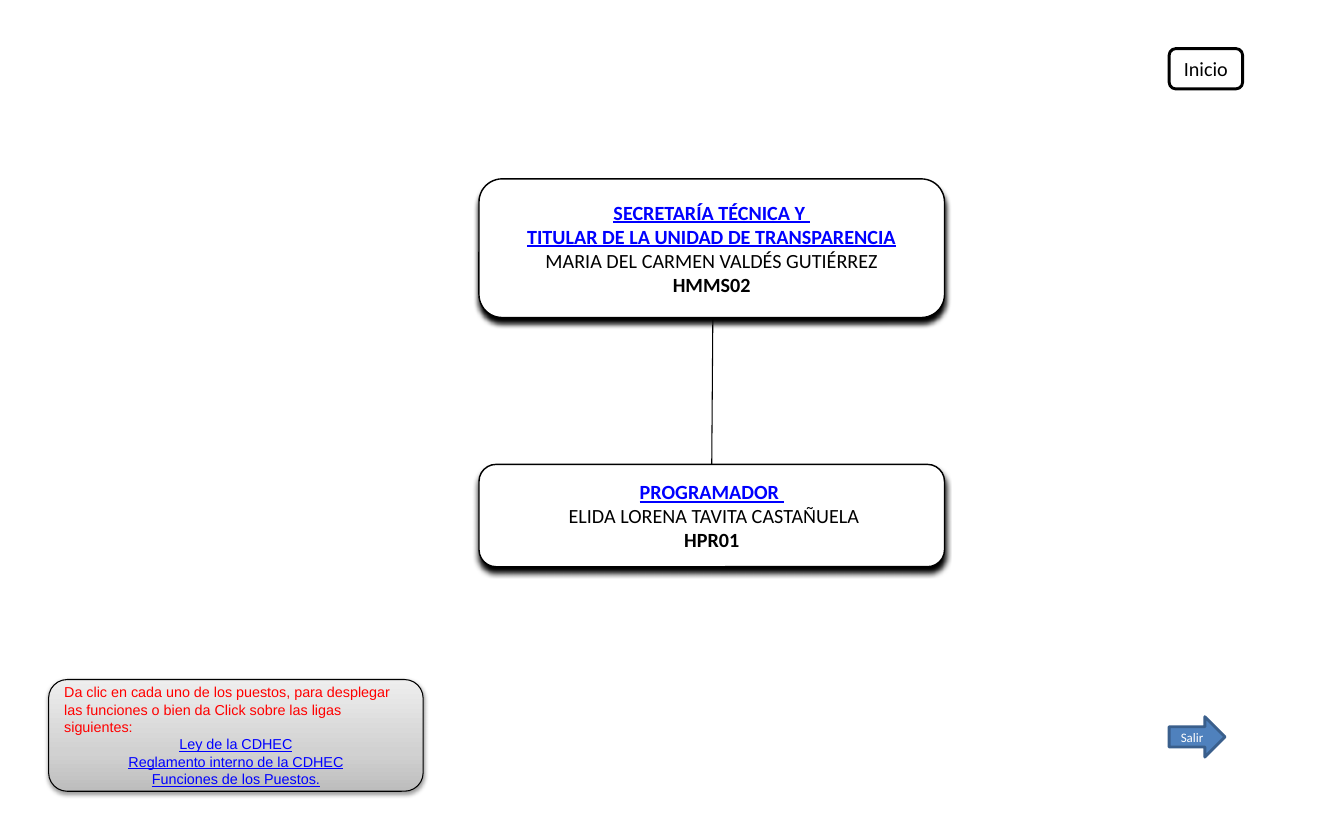
from lxml import etree
from pptx import Presentation, util as u
from pptx.dml import color
from pptx.enum import shapes, text
from pptx.oxml import ns

COLORS = {
    "white": "FFFFFF", "black": "000000", "link": "0000FF", "notice": "FF0000",
    "arrow": "4F81BD", "arrow_edge": "3A5F8C",
}
NOTE_GRADIENT = {0: "BDBDBD", 35: "D1D1D1", 100: "EEEEEE"}
CENTER, LEFT = text.PP_ALIGN.CENTER, text.PP_ALIGN.LEFT


def rgb(name):
    return color.RGBColor.from_string(COLORS[name])


def child(parent, tag, **attrs):
    return etree.SubElement(parent, ns.qn(tag), {k: str(v) for k, v in attrs.items()})


def line_of(words, color="black", bold=False, underline=False, align=CENTER):
    return dict(words=words, color=color, bold=bold, underline=underline, align=align)


class Chart:
    def __init__(self, prs):
        self.prs = prs
        self.s = prs.slides.add_slide(prs.slide_layouts[6])

    def x(self, percent):
        return u.Emu(round(self.prs.slide_width * percent / 100))

    def y(self, percent):
        return u.Emu(round(self.prs.slide_height * percent / 100))

    def shape(self, kind, left, top, width, height, fill="white", edge="black", weight=1):
        sp = self.s.shapes.add_shape(
            kind, self.x(left), self.y(top), self.x(width), self.y(height))
        sp.fill.solid()
        sp.fill.fore_color.rgb = rgb(fill)
        sp.line.color.rgb = rgb(edge)
        sp.line.width = u.Pt(weight)
        sp.shadow.inherit = False
        return sp

    def label(self, sp, lines, size, font="Calibri"):
        tf = sp.text_frame
        tf.word_wrap = True
        tf.vertical_anchor = text.MSO_ANCHOR.MIDDLE
        for i, line in enumerate(lines):
            p = tf.paragraphs[0] if i == 0 else tf.add_paragraph()
            p.alignment = line["align"]
            r = p.add_run()
            r.text = line["words"]
            r.font.name = font
            r.font.size = u.Pt(size)
            r.font.bold = line["bold"]
            r.font.underline = line["underline"]
            r.font.color.rgb = rgb(line["color"])
        return tf

    def shadow(self, sp, opacity, blur, distance):
        effects = sp._element.spPr.find(ns.qn("a:effectLst"))
        outer = child(effects, "a:outerShdw", blurRad=u.Pt(blur), dist=u.Pt(distance),
                      dir=5400000, rotWithShape=0)
        tint = child(outer, "a:srgbClr", val=COLORS["black"])
        child(tint, "a:alpha", val=opacity * 1000)

    def gradient(self, sp, stops):
        sp.fill.gradient()
        sp.fill.gradient_angle = 90
        gs_list = sp._element.spPr.find(ns.qn("a:gradFill")).find(ns.qn("a:gsLst"))
        gs_list.clear()
        for position, value in stops.items():
            child(child(gs_list, "a:gs", pos=position * 1000), "a:srgbClr", val=value)

    def position(self, top, height, titles, person, code):
        sp = self.shape(shapes.MSO_SHAPE.ROUNDED_RECTANGLE, 35.64, top, 34.64, height)
        self.shadow(sp, 100, 4, 4)
        lines = [line_of(t, "link", bold=True, underline=True) for t in titles]
        tf = self.label(sp, lines + [line_of(person), line_of(code, bold=True)], 14)
        tf.word_wrap = False
        tf.margin_left = tf.margin_right = u.Inches(0.17)
        tf.margin_top = tf.margin_bottom = u.Inches(0.09)

    def connector(self, x1, y1, x2, y2):
        c = self.s.shapes.add_connector(
            shapes.MSO_CONNECTOR.STRAIGHT, self.x(x1), self.y(y1), self.x(x2), self.y(y2))
        c.line.color.rgb = rgb("black")
        c.line.width = u.Pt(0.75)
        child(c._element.spPr, "a:effectLst")

    def button(self, kind, top, width, words, size, ink, **style):
        sp = self.shape(kind, 86.99, top, width, 4.95, weight=2, **style)
        self.label(sp, [line_of(words, ink)], size)

    def note(self, notice, links):
        sp = self.shape(shapes.MSO_SHAPE.ROUNDED_RECTANGLE,
                        3.62, 83.38, 27.87, 13.71, weight=0.75)
        self.gradient(sp, NOTE_GRADIENT)
        self.shadow(sp, 38, 3.1, 1.6)
        lines = [line_of(notice, "notice", align=LEFT)]
        lines += [line_of(link, "link", underline=True) for link in links]
        self.label(sp, lines, 10, "Arial")


def main():
    prs = Presentation()
    prs.slide_width, prs.slide_height = u.Inches(12.99), u.Inches(7.88)
    chart = Chart(prs)
    chart.position(56.98, 12.56, ["PROGRAMADOR "],
                   " ELIDA LORENA TAVITA CASTAÑUELA", "HPR01")
    chart.position(21.95, 17.01,
                   ["SECRETARÍA TÉCNICA Y ", "TITULAR DE LA UNIDAD DE TRANSPARENCIA"],
                   "MARIA DEL CARMEN VALDÉS GUTIÉRREZ", "HMMS02")
    chart.connector(53.04, 38.96, 52.96, 56.98)
    chart.button(shapes.MSO_SHAPE.ROUNDED_RECTANGLE, 5.96, 5.47, "Inicio", 14, "black")
    chart.button(shapes.MSO_SHAPE.RIGHT_ARROW, 87.94, 4.16, "Salir", 9, "white",
                 fill="arrow", edge="arrow_edge")
    chart.note(
        "Da clic en cada uno de los puestos, para desplegar las funciones "
        "o bien da Click sobre las ligas siguientes:",
        ["Ley de la CDHEC", "Reglamento interno de la CDHEC", "Funciones de los Puestos."])
    prs.save("out.pptx")


if __name__ == "__main__":
    main()
